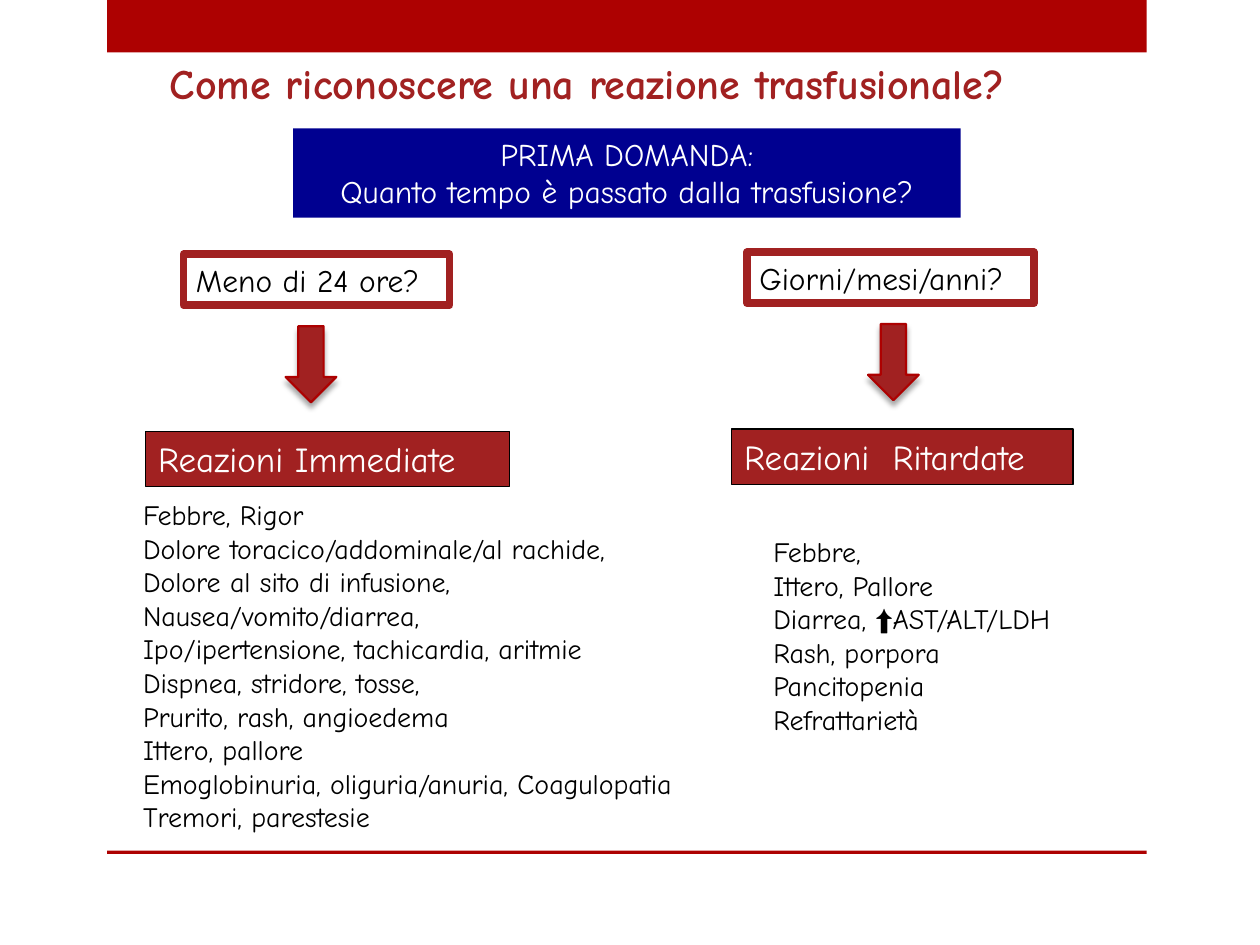
from dataclasses import dataclass
from lxml.etree import SubElement as Sub
from pptx import Presentation
from pptx.dml.color import RGBColor as RGB
from pptx.enum.shapes import MSO_SHAPE as Shape
from pptx.enum.text import MSO_ANCHOR as Anchor, PP_ALIGN as Align
from pptx.oxml.ns import qn
from pptx.util import Pt


@dataclass(frozen=True)
class Theme:
    font: str = "Comic Neue"
    sign: str = "Arial"
    bar: str = "AD0101"
    red: str = "A12121"
    blue: str = "000090"
    black: str = "000000"
    white: str = "FFFFFF"
    title: int = 24
    band: int = 20
    ask: int = 18
    body: int = 16


T = Theme()


@dataclass(frozen=True)
class Branch:
    ask: str
    name: str
    signs: tuple
    # Places relative to the branch: left, top, width, height
    frame: tuple
    arrow: tuple
    band: tuple
    notes: tuple


def write(shape, lines, size, color, bold=False, align=Align.LEFT, anchor=Anchor.TOP):
    """Each line is a tuple of runs; the arrow sign takes its own font."""
    frame = shape.text_frame
    frame.word_wrap = True
    frame.vertical_anchor = anchor
    for i, line in enumerate(lines):
        para = frame.add_paragraph() if i else frame.paragraphs[0]
        para.alignment = align
        for text in line:
            run = para.add_run()
            run.text = text
            font = run.font
            font.name = T.sign if text == "⬆" else T.font
            font.size = Pt(size)
            font.bold = bold
            font.color.rgb = RGB.from_string(color)


def draw(slide, kind, box, fill=None, line=None, width=0):
    shape = slide.shapes.add_shape(kind, *map(Pt, box))
    shape.shadow.inherit = False
    if fill:
        shape.fill.solid()
        shape.fill.fore_color.rgb = RGB.from_string(fill)
    else:
        shape.fill.background()
    if line:
        shape.line.color.rgb = RGB.from_string(line)
        shape.line.width = Pt(width)
    else:
        shape.line.fill.background()
    return shape


def label(slide, box, lines, size, color, **style):
    text = slide.shapes.add_textbox(*map(Pt, box))
    write(text, lines, size, color, **style)


def shade(shape):
    """Soft shadow straight below the shape."""
    effect = shape._element.spPr.find(qn("a:effectLst"))
    outer = Sub(effect, qn("a:outerShdw"), blurRad=str(Pt(3)), dist=str(Pt(3)),
                dir="5400000", rotWithShape="0")
    color = Sub(outer, qn("a:srgbClr"), val=T.black)
    Sub(color, qn("a:alpha"), val="35000")


def header(slide, box):
    x, y, w, h = box
    # Top bar and bottom rule
    draw(slide, Shape.RECTANGLE, (x, y, w, 30), T.bar)
    draw(slide, Shape.RECTANGLE, (x, y + h - 2, w, 2), T.bar)
    # Title
    label(slide, (x + 28.8, y + 29.5, w, 36),
          [("Come riconoscere una reazione trasfusionale?",)],
          T.title, T.red, bold=True, anchor=Anchor.MIDDLE)


def question(slide, box):
    panel = draw(slide, Shape.RECTANGLE, box, T.blue)
    lines = [("PRIMA DOMANDA:",), ("Quanto tempo è passato dalla trasfusione?",)]
    write(panel, lines, T.ask, T.white, align=Align.CENTER)


def branch(slide, spot, data):
    def place(part):
        return spot[0] + part[0], spot[1] + part[1], *part[2:]

    # Time span
    span = draw(slide, Shape.RECTANGLE, place(data.frame), line=T.red, width=4.5)
    write(span, [(data.ask,)], T.ask, T.black)
    # Arrow
    shade(draw(slide, Shape.DOWN_ARROW, place(data.arrow), T.red, T.bar, 1.25))
    # Reaction type
    band = draw(slide, Shape.RECTANGLE, place(data.band), T.red, T.black, 0.75)
    write(band, [(data.name,)], T.band, T.white)
    # Signs
    label(slide, place(data.notes), data.signs, T.body, T.black)


EARLY = Branch(
    "Meno di 24 ore?", "Reazioni Immediate",
    (("Febbre, Rigor",),
     ("Dolore toracico/addominale/al rachide,",),
     ("Dolore al sito di infusione,",),
     ("Nausea/vomito/diarrea,",),
     ("Ipo/ipertensione, tachicardia, aritmie",),
     ("Dispnea, stridore, tosse,",),
     ("Prurito, rash, angioedema",),
     ("Ittero, pallore",),
     ("Emoglobinuria, oliguria/anuria, Coagulopatia Tremori, parestesie",)),
    frame=(30.2, 0, 152, 29), arrow=(88.5, 41, 29, 43.5),
    band=(8.6, 101, 208, 31.5), notes=(0, 135.4, 360, 220))

LATE = Branch(
    "Giorni/mesi/anni?", "Reazioni  Ritardate",
    (("Febbre,",),
     ("Ittero, Pallore",),
     ("Diarrea, ", "⬆", "AST/ALT/LDH"),
     ("Rash, porpora",),
     ("Pancitopenia",),
     ("Refrattarietà",)),
    frame=(8.6, 0, 164, 29), arrow=(77.8, 41, 29, 43.5),
    band=(0, 101, 195, 31.5), notes=(16.6, 157.7, 240, 124))


def main():
    deck = Presentation()
    deck.slide_width, deck.slide_height = Pt(720), Pt(540)
    slide = deck.slides.add_slide(deck.slide_layouts[6])
    header(slide, (61.2, 0, 594, 488))
    question(slide, (167.5, 73.4, 381.5, 51))
    branch(slide, (74.7, 145.4), EARLY)
    branch(slide, (418.2, 144.2), LATE)
    deck.save("out.pptx")


if __name__ == "__main__":
    main()
